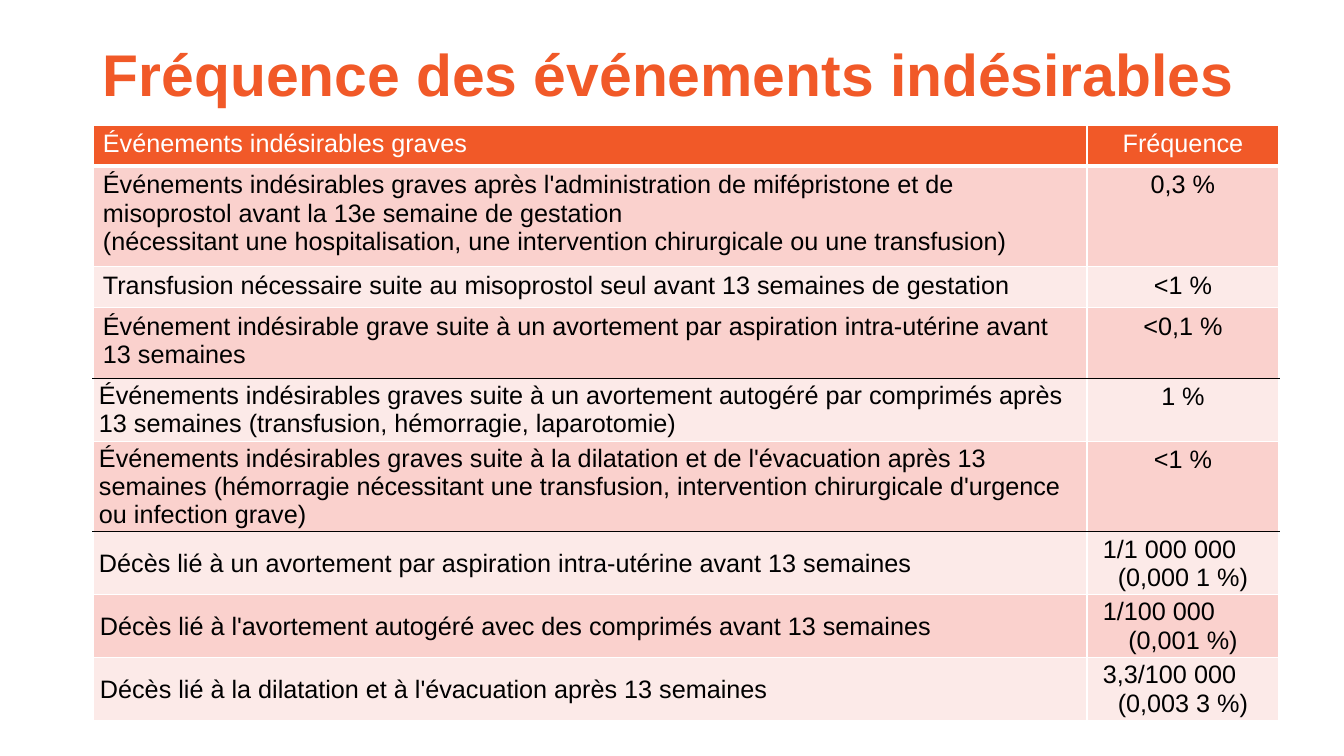
"""Build a slide with a table of adverse event frequencies."""
import lxml.etree
import pptx
import pptx.dml.color
import pptx.enum.text
import pptx.oxml.ns
import pptx.util

PX = 914400 / 100.8
THEME = {
    "font": "Arial", "title_size": 42, "body_size": 18,
    "accent": "F15928", "dark_band": "FAD1CD", "light_band": "FCEAE8",
    "white": "FFFFFF", "black": "000000",
}
ALIGN = pptx.enum.text.PP_ALIGN
ANCHOR = pptx.enum.text.MSO_ANCHOR


def px(length):
    return pptx.util.Emu(round(length * PX))


def write(paragraph, text, size=THEME["body_size"], color=THEME["black"], bold=False,
          align=ALIGN.LEFT, indent=0, spacing=1.0):
    paragraph.alignment = align
    paragraph.line_spacing = spacing
    if indent:
        paragraph._p.get_or_add_pPr().set("marL", str(px(indent)))
    run = paragraph.add_run()
    run.text = text
    run.font.name = THEME["font"]
    run.font.size = pptx.util.Pt(size)
    run.font.bold = bold
    run.font.color.rgb = pptx.dml.color.RGBColor.from_string(color)


presentation = pptx.Presentation()
presentation.slide_width, presentation.slide_height = px(1344), px(756)
slide = presentation.slides.add_slide(presentation.slide_layouts[6])

title = slide.shapes.add_textbox(px(93), px(40), px(1159), px(75)).text_frame
title.word_wrap = True
title.vertical_anchor = ANCHOR.MIDDLE
write(title.paragraphs[0], "Fréquence des événements indésirables", size=THEME["title_size"],
      color=THEME["accent"], bold=True, spacing=0.9)

# label lines, frequency lines, row height, label inset, frequency inset
ROWS = [
    (["Événements indésirables graves"], ["Fréquence"], 41, 10, 10),
    (["Événements indésirables graves après l'administration de mifépristone et de "
      "misoprostol avant la 13e semaine de gestation",
      "(nécessitant une hospitalisation, une intervention chirurgicale ou une transfusion)"],
     ["0,3 %"], 95, 10, 10),
    (["Transfusion nécessaire suite au misoprostol seul avant 13 semaines de gestation"],
     ["<1 %"], 41, 10, 10),
    (["Événement indésirable grave suite à un avortement par aspiration intra-utérine "
      "avant 13 semaines"], ["<0,1 %"], 67, 10, 10),
    (["Événements indésirables graves suite à un avortement autogéré par comprimés après "
      "13 semaines (transfusion, hémorragie, laparotomie)"], ["1 %"], 63, 6, 10),
    (["Événements indésirables graves suite à la dilatation et de l'évacuation après 13 "
      "semaines (hémorragie nécessitant une transfusion, intervention chirurgicale "
      "d'urgence ou infection grave)"], ["<1 %"], 85, 6, 10),
    (["Décès lié à un avortement par aspiration intra-utérine avant 13 semaines"],
     ["1/1 000 000", "(0,000 1 %)"], 63, 6, 6),
    (["Décès lié à l'avortement autogéré avec des comprimés avant 13 semaines"],
     ["1/100 000", "(0,001 %)"], 63, 7, 7),
    (["Décès lié à la dilatation et à l'évacuation après 13 semaines"],
     ["3,3/100 000", "(0,003 3 %)"], 63, 7, 7),
]
COLUMN_WIDTHS = [994, 192]
BLACK_RULES_BELOW = {3, 5}

table = slide.shapes.add_table(len(ROWS), 2, px(93), px(125), px(sum(COLUMN_WIDTHS)),
                               px(sum(row[2] for row in ROWS))).table
table.first_row = table.horz_banding = False
for column, width in zip(table.columns, COLUMN_WIDTHS):
    column.width = px(width)

for row_index, (label, frequency, height, *insets) in enumerate(ROWS):
    table.rows[row_index].height = px(height)
    band = "dark_band" if row_index % 2 else "light_band"
    fill = THEME["accent" if row_index == 0 else band]
    text_color = THEME["white" if row_index == 0 else "black"]
    for column_index, (lines, inset) in enumerate(zip((label, frequency), insets)):
        cell = table.cell(row_index, column_index)
        compact = inset < 10
        cell.margin_left = cell.margin_right = px(inset)
        cell.margin_top = cell.margin_bottom = px(0 if compact else 5)
        cell.vertical_anchor = ANCHOR.MIDDLE if compact else ANCHOR.TOP

        properties = cell._tc.get_or_add_tcPr()
        black_sides = {"lnT": row_index - 1 in BLACK_RULES_BELOW,
                       "lnB": row_index in BLACK_RULES_BELOW}
        for side in ("lnL", "lnR", "lnT", "lnB"):
            points = 3 if row_index == 0 and side == "lnB" else 1
            border = lxml.etree.SubElement(properties, pptx.oxml.ns.qn(f"a:{side}"),
                                           w=str(pptx.util.Pt(points)))
            solid = lxml.etree.SubElement(border, pptx.oxml.ns.qn("a:solidFill"))
            lxml.etree.SubElement(solid, pptx.oxml.ns.qn("a:srgbClr"),
                                  val=THEME["black" if black_sides.get(side) else "white"])
        cell.fill.solid()
        cell.fill.fore_color.rgb = pptx.dml.color.RGBColor.from_string(fill)

        for line_index, line in enumerate(lines):
            frame = cell.text_frame
            paragraph = frame.add_paragraph() if line_index else frame.paragraphs[0]
            ratio = column_index == 1 and len(lines) == 2 and line_index == 0
            centred = column_index == 1 and not ratio
            write(paragraph, line, color=text_color, indent=16 - inset if ratio else 0,
                  align=ALIGN.CENTER if centred else ALIGN.LEFT)

presentation.save("out.pptx")
